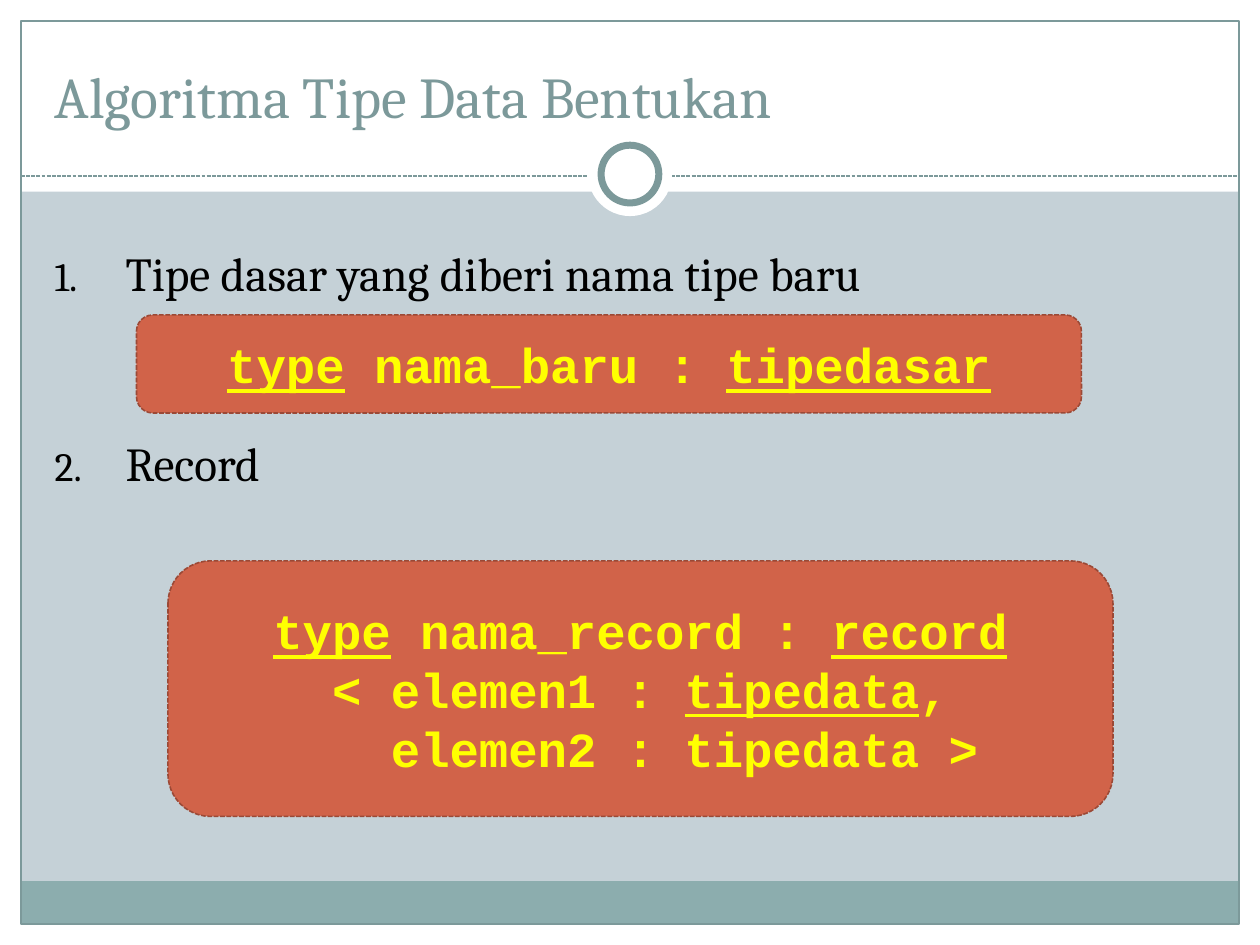
from lxml.etree import SubElement
from pptx import Presentation
from pptx.dml.color import RGBColor
from pptx.enum.dml import MSO_LINE
from pptx.enum.shapes import MSO_CONNECTOR, MSO_SHAPE
from pptx.enum.text import MSO_ANCHOR, PP_ALIGN
from pptx.oxml.ns import qn
from pptx.util import Pt

TEAL, WHITE, BLACK = "7C999A", "FFFFFF", "000000"
WIDE, HIGH, EDGE = 720, 540, 12


def paint(color, code):
    color.rgb = RGBColor.from_string(code)


def place(shape, left, top, width, height):
    shape.left, shape.top = Pt(left), Pt(top)
    shape.width, shape.height = Pt(width), Pt(height)


def style(font, name, size, code, bold=False):
    font.name, font.size, font.bold = name, Pt(size), bold
    paint(font.color, code)


def stroke(line, code, width, dash=None):
    paint(line.color, code)
    line.width = Pt(width)
    if dash:
        line.dash_style = dash


def add_form(slide, kind, box, fill=None, edge=None):
    shape = slide.shapes.add_shape(kind, *map(Pt, box))
    shape.shadow.inherit = False
    if fill:
        shape.fill.solid()
        paint(shape.fill.fore_color, fill)
    else:
        shape.fill.background()
    if edge:
        stroke(shape.line, *edge)
    else:
        shape.line.fill.background()
    return shape


def add_frame(slide):
    # White margins: bottom, top band, left, right
    for box in [(0, HIGH - EDGE, WIDE, EDGE), (0, 0, WIDE, 109.5),
                (0, 0, EDGE, HIGH), (WIDE - EDGE, 0, EDGE, HIGH)]:
        add_form(slide, MSO_SHAPE.RECTANGLE, box, WHITE)
    # Footer band and page border
    inner = WIDE - 2 * EDGE
    add_form(slide, MSO_SHAPE.RECTANGLE, (EDGE, 503.5, inner, 24.5), "8CADAE")
    add_form(slide, MSO_SHAPE.RECTANGLE, (EDGE, EDGE, inner, HIGH - 2 * EDGE),
             edge=(TEAL, 0.75))
    # Dashed rule under the title
    rule = slide.shapes.add_connector(
        MSO_CONNECTOR.STRAIGHT, Pt(EDGE), Pt(100.6), Pt(WIDE - EDGE), Pt(100.6))
    stroke(rule.line, TEAL, 0.75, MSO_LINE.SQUARE_DOT)
    SubElement(rule._element.spPr, qn("a:effectLst"))
    # Ring on the rule
    for size, edge in [(48, None), (33, (TEAL, 4))]:
        box = ((WIDE - size) / 2, 99.5 - size / 2, size, size)
        add_form(slide, MSO_SHAPE.OVAL, box, WHITE, edge)


def add_title(slide, text):
    title = slide.shapes.title
    place(title, 24, 18, 672, 60)
    title.text_frame.vertical_anchor = MSO_ANCHOR.BOTTOM
    para = title.text_frame.paragraphs[0]
    para.text, para.alignment = text, PP_ALIGN.LEFT
    style(para.font, "Cambria", 33, TEAL)
    slide.shapes._spTree.append(title._element)


def number(para):
    props = para._p.get_or_add_pPr()
    props.set("marL", str(Pt(40.5)))
    props.set("indent", str(Pt(-40.5)))
    tint = SubElement(props, qn("a:buClr"))
    SubElement(tint, qn("a:srgbClr"), val=BLACK)
    SubElement(props, qn("a:buSzPct"), val="85000")
    SubElement(props, qn("a:buFont"), typeface="+mj-lt")
    SubElement(props, qn("a:buAutoNum"), type="arabicPeriod")


def add_list(slide, items):
    body = slide.placeholders[1]
    place(body, 24, 120, 669.6, 360)
    frame = body.text_frame
    for spot, (text, gap) in enumerate(items):
        para = frame.add_paragraph() if spot else frame.paragraphs[0]
        para.text = text
        para.line_spacing, para.space_before = 1.5, Pt(gap)
        number(para)
        style(para.font, "Cambria", 27, BLACK)
    slide.shapes._spTree.append(body._element)


def add_code(slide, box, lines):
    """Each line is a left margin and its runs; a run is text and underline."""
    card = add_form(slide, MSO_SHAPE.ROUNDED_RECTANGLE, box, "D16349",
                    ("9B4936", 0.9, MSO_LINE.SQUARE_DOT))
    frame = card.text_frame
    frame.word_wrap, frame.vertical_anchor = True, MSO_ANCHOR.MIDDLE
    for spot, (margin, runs) in enumerate(lines):
        para = frame.add_paragraph() if spot else frame.paragraphs[0]
        para.alignment = PP_ALIGN.CENTER
        para._p.get_or_add_pPr().set("marL", str(Pt(margin)))
        style(para.font, "Courier New", 28, "FFFF00", True)
        for text, under in runs:
            run = para.add_run()
            run.text, run.font.underline = text, under


def main():
    deck = Presentation()
    deck.slide_width, deck.slide_height = Pt(WIDE), Pt(HIGH)
    slide = deck.slides.add_slide(deck.slide_layouts[1])
    back = slide.background.fill
    back.solid()
    paint(back.fore_color, "C5D1D7")

    add_frame(slide)
    add_title(slide, "Algoritma Tipe Data Bentukan")
    add_list(slide, [("Tipe dasar yang diberi nama tipe baru", 5.4),
                     ("Record", 59.5)])

    # Code cards
    add_code(slide, (78, 180, 540, 56), [
        (0, [("type", True), (" nama_baru : ", False), ("tipedasar", True)])])
    add_code(slide, (96, 320.5, 540, 146), [
        (0, [("type", True), (" nama_record : ", False), ("record", True)]),
        (0, [("< elemen1 : ", False), ("tipedata", True), (",", False)]),
        (50.4, [("elemen2 : tipedata >", False)])])

    deck.save("out.pptx")


if __name__ == "__main__":
    main()
